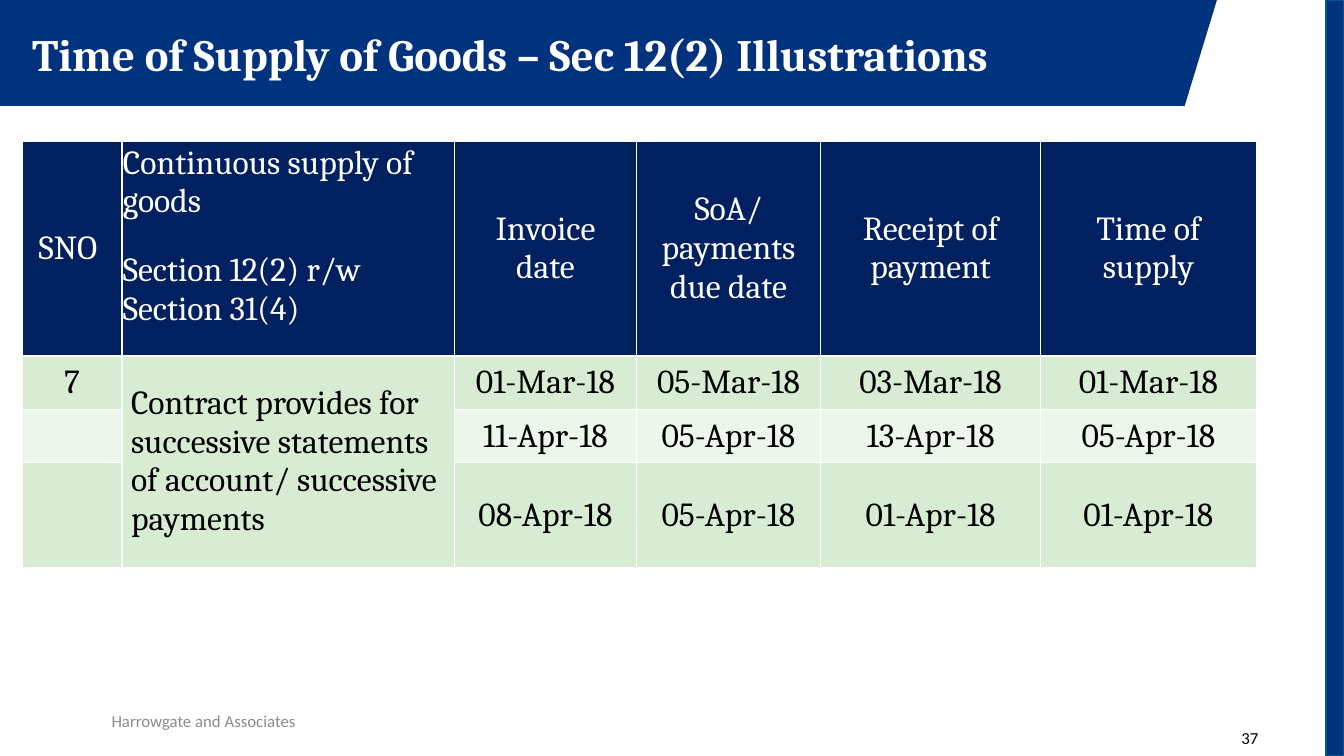
from dataclasses import dataclass

from lxml import etree
from pptx import Presentation
from pptx import util as u
from pptx.dml.color import RGBColor
from pptx.enum import shapes, text
from pptx.oxml import ns

In = u.Inches
LEFT, MID, RIGHT = text.PP_ALIGN.LEFT, text.PP_ALIGN.CENTER, text.PP_ALIGN.RIGHT


@dataclass(frozen=True)
class Theme:
    blue: str = "00327D"
    edge: str = "0B5292"
    navy: str = "002060"
    green: str = "D7ECD3"
    pale: str = "ECF6EA"
    white: str = "FFFFFF"
    black: str = "000000"
    gray: str = "8C8C8C"
    head: str = "Cambria"
    body: str = "Calibri"
    title: int = 32
    cell: int = 24
    small: int = 12


T = Theme()

COLS = [0.99, 3.3, 1.8, 1.83, 2.18, 2.14]
ROWS = [0.81, 0.81, 0.53, 0.53, 1.04]
HEADS = [
    " SNO", "Continuous supply of goods", "Invoice date",
    "SoA/ payments due date", "Receipt of payment", "Time of supply",
]
RULE = "Section 12(2) r/w Section 31(4)"
TERMS = "Contract provides for successive statements of account/ successive payments"
DATES = [
    ["01-Mar-18", "05-Mar-18", "03-Mar-18", "01-Mar-18"],
    ["11-Apr-18", "05-Apr-18", "13-Apr-18", "05-Apr-18"],
    ["08-Apr-18", "05-Apr-18", "01-Apr-18", "01-Apr-18"],
]
ROOMY = (0.09, 0.06, 0.09, 0.06)
TIGHT = (0.01, 0.01, 0.01, 0)


def write(frame, words, size=T.cell, font=T.head, color=T.black,
          bold=False, align=LEFT, lead=None, before=None):
    par = frame.paragraphs[0]
    par.alignment = align
    if lead:
        par.line_spacing = lead
    if before:
        par.space_before = u.Pt(before)
    run = par.add_run()
    run.text = words
    run.font.size, run.font.name, run.font.bold = u.Pt(size), font, bold
    run.font.color.rgb = RGBColor.from_string(color)


def label(slide, box, words, anchor=text.MSO_ANCHOR.MIDDLE, **style):
    frame = slide.shapes.add_textbox(*map(In, box)).text_frame
    frame.word_wrap = True
    frame.vertical_anchor = anchor
    write(frame, words, **style)


def paint(shape, fill, line=None):
    shape.shadow.inherit = False
    shape.fill.solid()
    shape.fill.fore_color.rgb = RGBColor.from_string(fill)
    if line:
        shape.line.color.rgb = RGBColor.from_string(line)
        shape.line.width = u.Pt(1)
    else:
        shape.line.fill.background()


def banner(slide, box, slant=0.32):
    left, top, width, height = box
    path = slide.shapes.build_freeform(In(left), In(top))
    path.add_line_segments([
        (In(left), In(top + height)),
        (In(left + width - slant), In(top + height)),
        (In(left + width), In(top)),
    ])
    paint(path.convert_to_shape(), T.blue)
    label(slide, (left + 0.22, top + 0.16, 12.24, 0.64),
          "Time of Supply of Goods – Sec 12(2) Illustrations",
          anchor=text.MSO_ANCHOR.TOP, size=T.title, color=T.white,
          bold=True, lead=1.1, before=7)


def stripe(slide, box):
    bar = slide.shapes.add_shape(shapes.MSO_SHAPE.RECTANGLE, *map(In, box))
    paint(bar, T.blue, T.edge)


def rim(cell, widths):
    """Set the left, right, top and bottom borders; zero means no line."""
    props = cell._tc.get_or_add_tcPr()
    for side, width in zip("LRTB", widths):
        line = etree.SubElement(props, ns.qn(f"a:ln{side}"), w=str(u.Pt(width)))
        if width:
            fill = etree.SubElement(line, ns.qn("a:solidFill"))
            etree.SubElement(fill, ns.qn("a:srgbClr"), val=T.white)
        else:
            etree.SubElement(line, ns.qn("a:noFill"))


def fill_in(cell, words, pad=TIGHT, **style):
    cell.margin_left, cell.margin_top, cell.margin_right, cell.margin_bottom = map(In, pad)
    cell.vertical_anchor = text.MSO_ANCHOR.MIDDLE
    write(cell.text_frame, words, **style)


def grid(slide, left, top):
    table = slide.shapes.add_table(
        len(ROWS), len(COLS), In(left), In(top), In(sum(COLS)), In(sum(ROWS))).table
    for col, width in zip(table.columns, COLS):
        col.width = In(width)
    for row, height in zip(table.rows, ROWS):
        row.height = In(height)

    fills = [T.navy, T.navy, T.green, T.pale, T.green]
    tops = [1, 0, 1.5, 1, 1]
    ends = tops[1:] + [1]
    for r, fill in enumerate(fills):
        for c in range(len(COLS)):
            cell = table.cell(r, c)
            rim(cell, (1, 1, tops[r], ends[r]))
            cell.fill.solid()
            cell.fill.fore_color.rgb = RGBColor.from_string(fill)

    for c, words in enumerate(HEADS):
        cell = table.cell(0, c)
        if c != 1:
            cell.merge(table.cell(1, c))
        fill_in(cell, words, pad=TIGHT if c == 1 else ROOMY,
                color=T.white, align=MID if c > 1 else LEFT)
    fill_in(table.cell(1, 1), RULE, color=T.white)

    fill_in(table.cell(2, 0), "7", align=MID)
    table.cell(2, 1).merge(table.cell(4, 1))
    fill_in(table.cell(2, 1), TERMS, pad=ROOMY)
    for r, dates in enumerate(DATES, 2):
        for c, date in enumerate(dates, 2):
            fill_in(table.cell(r, c), date, align=MID)


def footer(slide, left, top):
    small = dict(size=T.small, font=T.body)
    label(slide, (left, top, 4.5, 0.4), "Harrowgate and Associates",
          color=T.gray, align=MID, **small)
    label(slide, (left + 9.81, top + 0.17, 3, 0.4), "37", align=RIGHT, **small)


def main():
    deck = Presentation()
    deck.slide_width, deck.slide_height = In(13.33), In(7.5)
    slide = deck.slides.add_slide(deck.slide_layouts[6])
    banner(slide, (0, 0, 12.07, 1.05))
    stripe(slide, (13.15, 0, 0.18, 7.5))
    grid(slide, 0.22, 1.4)
    footer(slide, -0.23, 6.95)
    deck.save("out.pptx")


if __name__ == "__main__":
    main()
